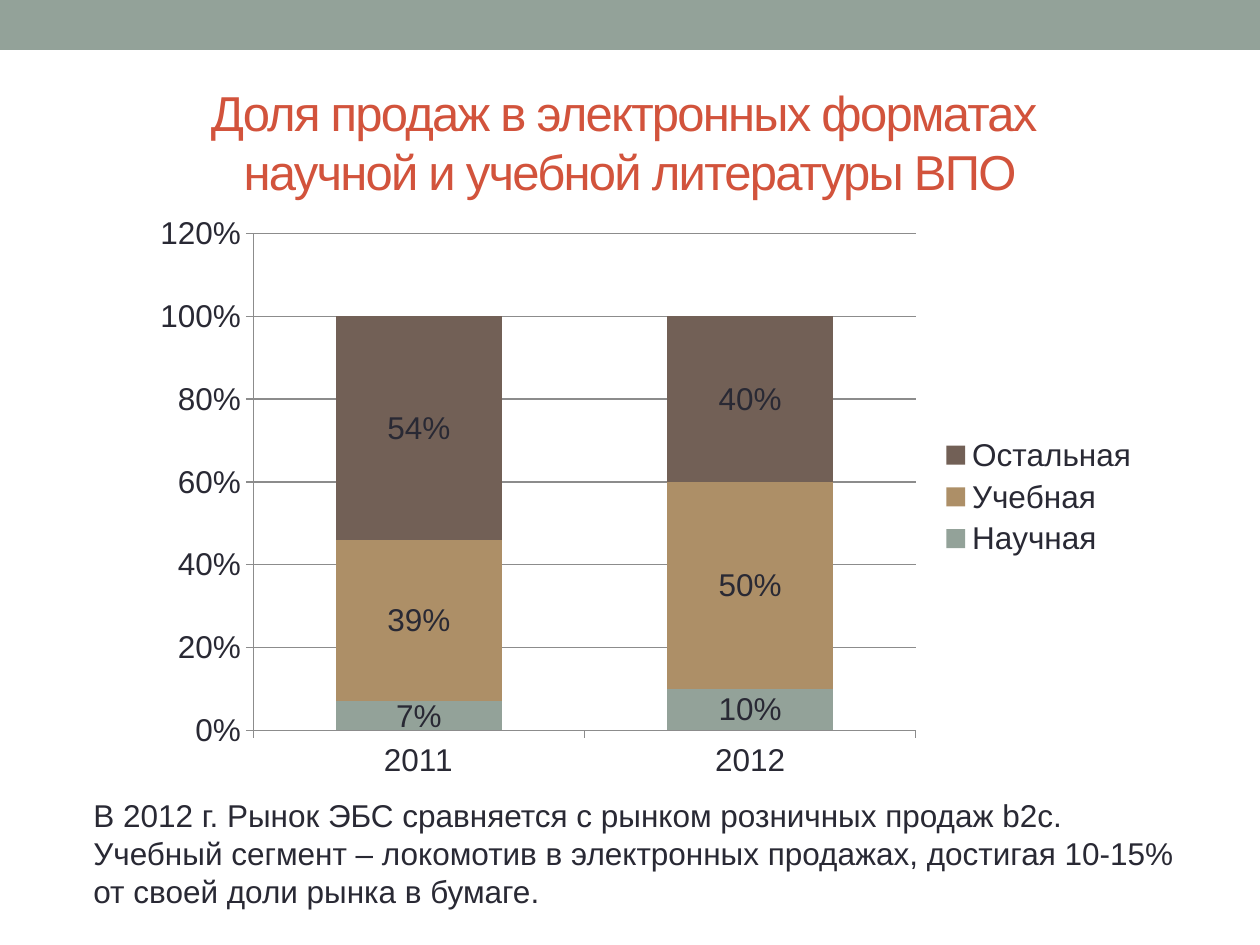
from pptx import Presentation
from pptx.chart.data import CategoryChartData
from pptx.dml.color import RGBColor
from pptx.enum.chart import XL_CHART_TYPE, XL_LABEL_POSITION, XL_LEGEND_POSITION, XL_TICK_MARK
from pptx.enum.shapes import MSO_SHAPE
from pptx.enum.text import MSO_ANCHOR, PP_ALIGN
from pptx.util import Emu, Pt

STACKED = XL_CHART_TYPE.COLUMN_STACKED
LABEL_CENTER = XL_LABEL_POSITION.CENTER
LEGEND_RIGHT = XL_LEGEND_POSITION.RIGHT
TICK_OUT = XL_TICK_MARK.OUTSIDE
RECT = MSO_SHAPE.RECTANGLE
MIDDLE = MSO_ANCHOR.MIDDLE
CENTER = PP_ALIGN.CENTER

PX = 914400 // 126
FONT = "Arial"
COLORS = {
    "title": "D2533C", "text": "292934", "axis": "8C8C8C",
    "sage": "93A299", "sand": "AD8F67", "brown": "726056",
}
YEARS = ["2011", "2012"]
SERIES = [
    ("Научная", (0.07, 0.10), "sage"),
    ("Учебная", (0.39, 0.50), "sand"),
    ("Остальная", (0.54, 0.40), "brown"),
]
TITLE = "Доля продаж в электронных форматах \vнаучной и учебной литературы ВПО"
NOTES = [
    "В 2012 г. Рынок ЭБС сравняется с рынком розничных продаж b2c.",
    "Учебный сегмент – локомотив в электронных продажах, достигая 10-15% "
    "от своей доли рынка в бумаге.",
]


def px(*lengths):
    return [Emu(n * PX) for n in lengths]


def color(name):
    return RGBColor.from_string(COLORS[name])


def style_font(font, size, name):
    font.name = FONT
    font.size = Pt(size)
    font.color.rgb = color(name)


def add_band(s):
    band = s.shapes.add_shape(RECT, *px(0, 0, 1260, 50))
    band.shadow.inherit = False
    band.fill.solid()
    band.fill.fore_color.rgb = color("sage")
    band.line.fill.background()


def set_title(s):
    title = s.shapes.title
    title.left, title.top, title.width, title.height = px(63, 73, 1134, 136)
    tf = title.text_frame
    tf.text = TITLE
    tf.vertical_anchor = MIDDLE
    p = tf.paragraphs[0]
    p.alignment = CENTER
    for r in p.runs:
        style_font(r.font, 28, "title")
        r.font._element.set("spc", "-100")


def style_axis(axis):
    axis.major_tick_mark = TICK_OUT
    axis.format.line.color.rgb = color("axis")


def add_sales_chart(s):
    data = CategoryChartData(number_format="0%")
    data.categories = YEARS
    for name, values, _ in SERIES:
        data.add_series(name, values)
    chart = s.shapes.add_chart(STACKED, *px(140, 204, 1012, 586), data).chart
    style_font(chart.font, 18, "text")
    chart.has_title = False
    chart.has_legend = True
    chart.legend.position = LEGEND_RIGHT
    chart.legend.include_in_layout = False

    style_axis(chart.category_axis)
    axis = chart.value_axis
    style_axis(axis)
    axis.minimum_scale, axis.maximum_scale, axis.major_unit = 0, 1.2, 0.2
    axis.tick_labels.number_format = "0%"
    axis.tick_labels.number_format_is_linked = False
    axis.major_gridlines.format.line.color.rgb = color("axis")

    plot = chart.plots[0]
    plot.gap_width = plot.overlap = 100
    plot.vary_by_categories = False
    for series, (_, _, fill) in zip(plot.series, SERIES):
        series.format.fill.solid()
        series.format.fill.fore_color.rgb = color(fill)
        labels = series.data_labels
        labels.show_value = True
        labels.position = LABEL_CENTER
        style_font(labels.font, 18, "text")


def add_notes_text(s):
    tf = s.shapes.add_textbox(*px(81, 790, 1131, 127)).text_frame
    tf.word_wrap = True
    tf.text = "\n".join(NOTES)
    for p in tf.paragraphs:
        style_font(p.runs[0].font, 18, "text")


def main():
    prs = Presentation()
    prs.slide_width, prs.slide_height = px(1260, 945)
    s = prs.slides.add_slide(prs.slide_layouts[5])
    add_band(s)
    set_title(s)
    add_sales_chart(s)
    add_notes_text(s)
    prs.save("out.pptx")


if __name__ == "__main__":
    main()
